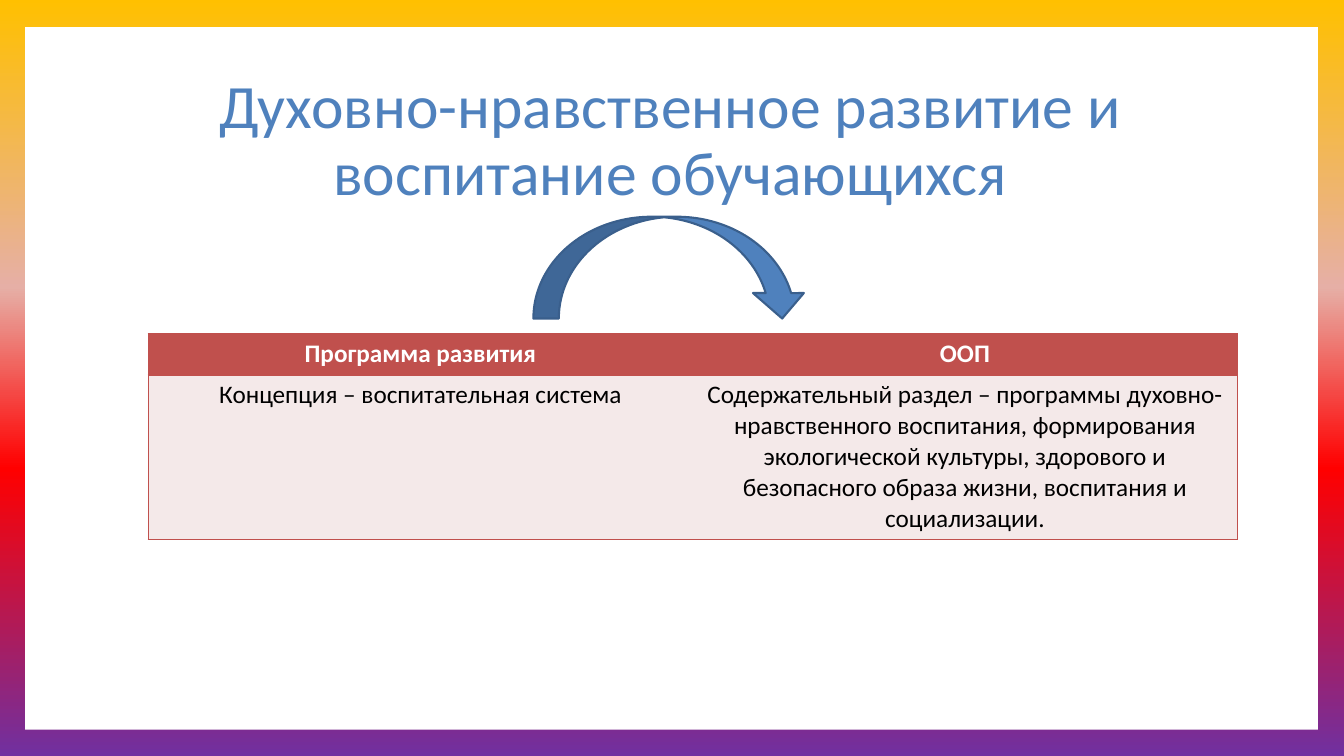
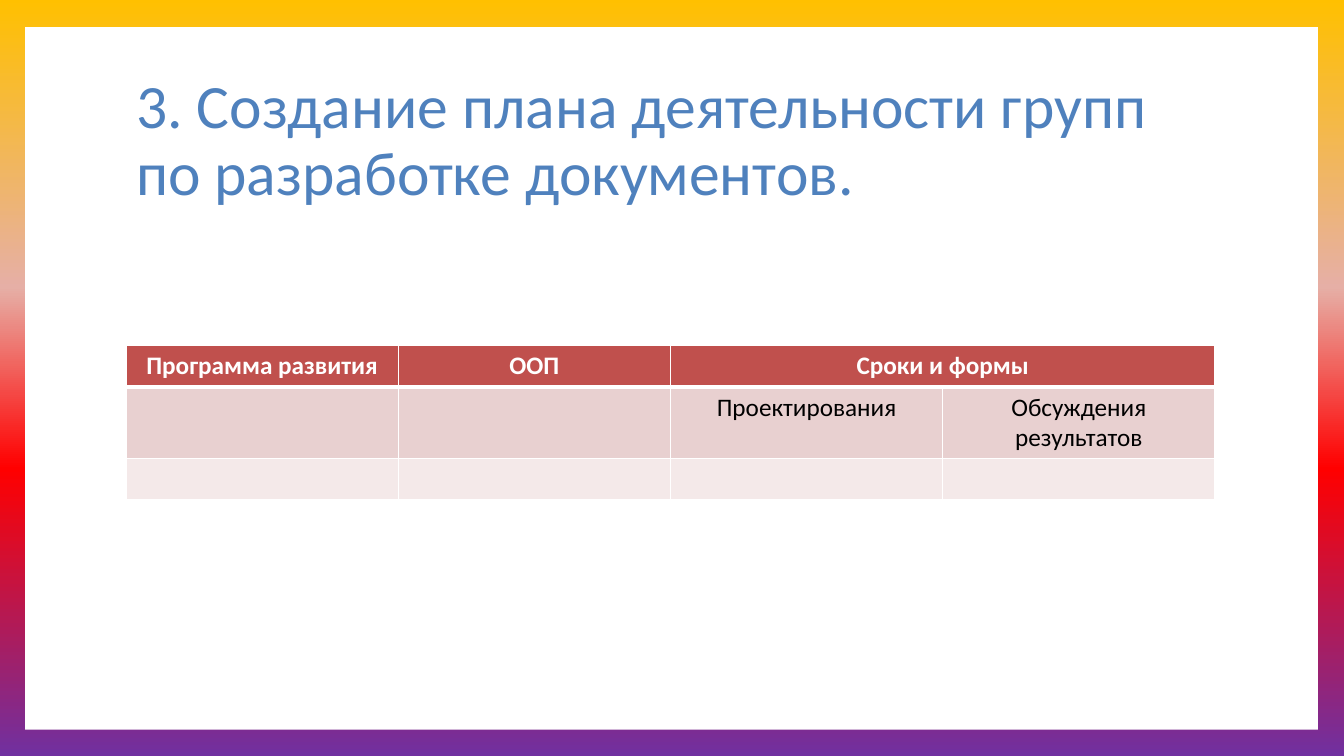
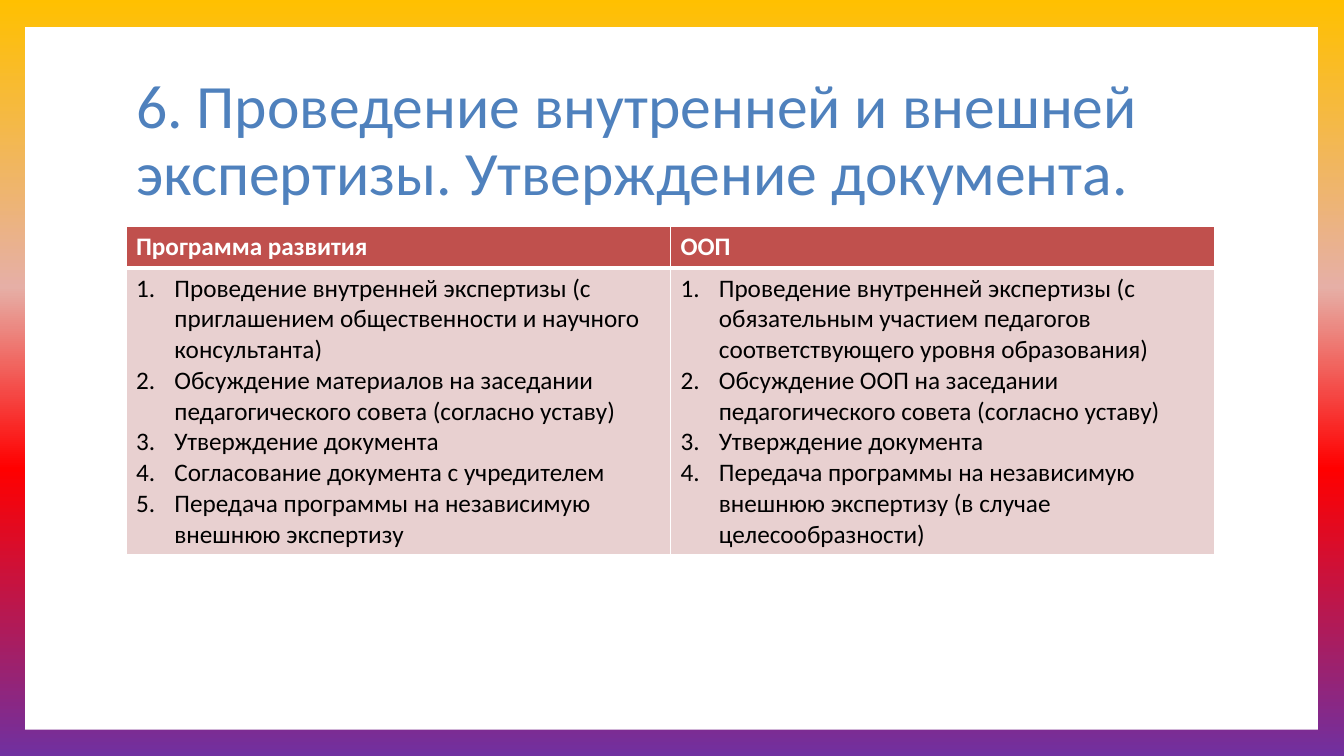
import lxml.etree
import pptx
import pptx.dml.color
import pptx.enum.shapes
import pptx.enum.text
import pptx.oxml
import pptx.oxml.ns
import pptx.util

Inches = pptx.util.Inches
Pt = pptx.util.Pt
qn = pptx.oxml.ns.qn
ALIGN = pptx.enum.text.PP_ALIGN
SHAPE = pptx.enum.shapes.MSO_SHAPE

COLORS = {
    "title": "4F81BD", "arrow_line": "3A5F8C", "header": "C0504D",
    "band": "E8D0D0", "light": "F4E9E9", "white": "FFFFFF", "text": "000000",
}
BACKGROUND_STOPS = [(0, "FFC000"), (38, "E6AFA6"), (62, "FF0000"), (100, "7030A0")]
FONT = "Calibri"
TITLE_BOX = (1.25, 0.67, 10.8, 1.48)
PANEL_BOX = (0.25, 0.27, 12.82, 6.97)
HEADER_HEIGHT = 0.41
LIST_INDENT = 0.38


def color(name):
    return pptx.dml.color.RGBColor.from_string(COLORS[name])


def inches(box):
    return [Inches(value) for value in box]


def set_all(target, values):
    for name, value in values.items():
        setattr(target, name, value)


def format_paragraph(paragraph, align, size, color_name, bold=False):
    paragraph.alignment = align
    for run in paragraph.runs:
        set_all(run.font, {"name": FONT, "size": Pt(size), "bold": bold})
        run.font.color.rgb = color(color_name)


def add_filled_shape(slide, kind, box, fill, line=None, line_width=0):
    shape = slide.shapes.add_shape(kind, *inches(box))
    shape.shadow.inherit = False
    shape.fill.solid()
    shape.fill.fore_color.rgb = color(fill)
    if line:
        shape.line.color.rgb = color(line)
        shape.line.width = Pt(line_width)
    else:
        shape.line.fill.background()
    return shape


# Shared frame: gradient background and white panel
def set_background(master):
    stops = "".join(
        f'<a:gs pos="{position * 1000}"><a:srgbClr val="{value}"/></a:gs>'
        for position, value in BACKGROUND_STOPS)
    background = pptx.oxml.parse_xml(
        f'<p:bg {pptx.oxml.ns.nsdecls("p", "a")}><p:bgPr>'
        f'<a:gradFill rotWithShape="1"><a:gsLst>{stops}</a:gsLst>'
        '<a:lin ang="5400000" scaled="0"/></a:gradFill><a:effectLst/></p:bgPr></p:bg>')
    content = master.element.find(qn("p:cSld"))
    for old_background in content.findall(qn("p:bg")):
        content.remove(old_background)
    content.insert(0, background)


def move_panel_to_layout(slide, layout):
    panel = add_filled_shape(slide, SHAPE.RECTANGLE, PANEL_BOX, "white")
    panel.element.nvSpPr.cNvPr.set("id", "100")
    layout.shapes.element.insert(2, panel.element)


def add_titled_slide(presentation, layout, text, align=ALIGN.LEFT):
    slide = presentation.slides.add_slide(layout)
    title = slide.shapes.title
    set_all(title, dict(zip(("left", "top", "width", "height"), inches(TITLE_BOX))))
    title.text_frame.text = text
    set_all(title.text_frame, {
        "word_wrap": True,
        "auto_size": pptx.enum.text.MSO_AUTO_SIZE.NONE,
        "vertical_anchor": pptx.enum.text.MSO_ANCHOR.MIDDLE,
    })
    paragraph = title.text_frame.paragraphs[0]
    paragraph.line_spacing = 0.9
    format_paragraph(paragraph, align, 44, "title")
    return slide


# Tables
def set_borders(cell, borders):
    """Borders map each side (L, R, T, B) to (colour name, width) or None."""
    properties = cell._tc.get_or_add_tcPr()
    for index, side in enumerate("LRTB"):
        line = lxml.etree.Element(qn(f"a:ln{side}"))
        if borders[side]:
            name, width = borders[side]
            line.set("w", str(Pt(width)))
            fill = lxml.etree.SubElement(line, qn("a:solidFill"))
            lxml.etree.SubElement(fill, qn("a:srgbClr"), val=COLORS[name])
        else:
            lxml.etree.SubElement(line, qn("a:noFill"))
        properties.insert(index, line)


def outline_borders(row, column, last_column):
    edge = ("header", 1)
    return {"L": edge if column == 0 else None,
            "R": edge if column == last_column else None,
            "T": edge, "B": edge}


def grid_borders(row, column, last_column):
    thin, thick = ("white", 1), ("white", 3)
    return {"L": thin, "R": thin,
            "T": thick if row == 1 else thin,
            "B": thick if row == 0 else thin}


def number_paragraph(paragraph):
    properties = paragraph._p.get_or_add_pPr()
    properties.set("marL", str(Inches(LIST_INDENT)))
    properties.set("indent", str(-Inches(LIST_INDENT)))
    lxml.etree.SubElement(properties, qn("a:buAutoNum"), type="arabicPeriod")


def add_plan_table(slide, box, rows, body_heights, body_fills, borders, align):
    """A list in a cell becomes numbered paragraphs."""
    last_column = len(rows[0]) - 1
    table = slide.shapes.add_table(len(rows), len(rows[0]), *inches(box)).table
    table.horz_banding = False
    heights = [HEADER_HEIGHT, *body_heights]
    fills = ["header", *body_fills]
    for row, texts in enumerate(rows):
        table.rows[row].height = Inches(heights[row])
        for column, text in enumerate(texts):
            cell = table.cell(row, column)
            numbered = isinstance(text, list)
            cell.text = "\n".join(text) if numbered else text
            cell.fill.solid()
            cell.fill.fore_color.rgb = color(fills[row])
            set_borders(cell, borders(row, column, last_column))
            for paragraph in cell.text_frame.paragraphs:
                format_paragraph(paragraph, align, 18,
                                 "text" if row else "white", bold=row == 0)
                if numbered:
                    number_paragraph(paragraph)
    return table


# Slides
def build_education_slide(presentation, layout):
    slide = add_titled_slide(
        presentation, layout,
        "Духовно-нравственное развитие и воспитание обучающихся", ALIGN.CENTER)
    add_plan_table(
        slide, (1.47, 3.31, 10.8, 2.04),
        [["Программа развития", "ООП"],
         ["Концепция – воспитательная система",
          "Содержательный раздел – программы духовно-нравственного воспитания, "
          "формирования экологической культуры, здорового и безопасного образа "
          "жизни, воспитания и социализации."]],
        [1.63], ["light"], outline_borders, ALIGN.CENTER)
    add_filled_shape(slide, SHAPE.CURVED_DOWN_ARROW, (5.29, 2.15, 2.72, 1.01),
                     "title", "arrow_line", 1.5)
    return slide


def build_schedule_slide(presentation, layout):
    slide = add_titled_slide(
        presentation, layout,
        "3. Создание плана деятельности групп по разработке документов.")
    table = add_plan_table(
        slide, (1.25, 3.43, 10.8, 1.51),
        [["Программа развития", "ООП", "Сроки и формы", ""],
         ["", "", "Проектирования", "Обсуждения результатов"],
         ["", "", "", ""]],
        [0.71, 0.4], ["band", "light"], grid_borders, ALIGN.CENTER)
    table.cell(0, 2).merge(table.cell(0, 3))
    return slide


def build_review_slide(presentation, layout):
    slide = add_titled_slide(
        presentation, layout,
        "6. Проведение внутренней и внешней экспертизы. Утверждение документа.")
    add_plan_table(
        slide, (1.25, 2.25, 10.8, 3.25),
        [["Программа развития", "ООП"],
         [["Проведение внутренней экспертизы (с приглашением общественности и "
           "научного консультанта)",
           "Обсуждение материалов на заседании педагогического совета "
           "(согласно уставу)",
           "Утверждение документа",
           "Согласование документа с учредителем",
           "Передача программы на независимую внешнюю экспертизу"],
          ["Проведение внутренней экспертизы (с обязательным участием педагогов "
           "соответствующего уровня образования)",
           "Обсуждение ООП на заседании педагогического совета (согласно уставу)",
           "Утверждение документа",
           "Передача программы на независимую внешнюю экспертизу "
           "(в случае целесообразности)"]]],
        [2.84], ["band"], grid_borders, ALIGN.LEFT)
    return slide


def main():
    presentation = pptx.Presentation()
    presentation.slide_width = Inches(13.33)
    presentation.slide_height = Inches(7.5)
    layout = presentation.slide_layouts[5]
    set_background(presentation.slide_master)
    first_slide = build_education_slide(presentation, layout)
    move_panel_to_layout(first_slide, layout)
    build_schedule_slide(presentation, layout)
    build_review_slide(presentation, layout)
    presentation.save("out.pptx")


if __name__ == "__main__":
    main()
